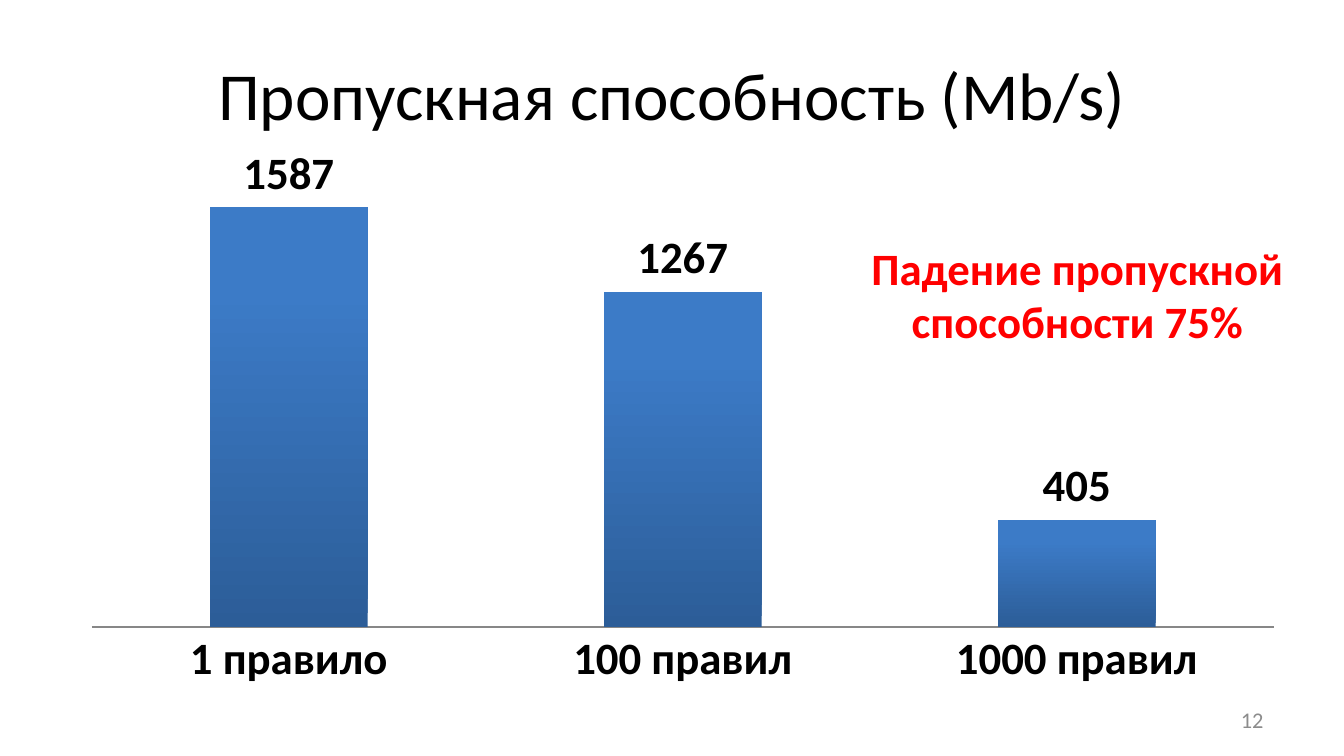
import pptx
import pptx.chart.data
import pptx.dml.color
import pptx.enum.chart
import pptx.enum.text
import pptx.oxml
import pptx.util
from pptx.util import Cm

RGB = pptx.dml.color.RGBColor.from_string
Pt = pptx.util.Pt
ALIGN = pptx.enum.text.PP_ALIGN
ANCHOR = pptx.enum.text.MSO_ANCHOR


class Theme:
    font = "Calibri"
    text = RGB("000000")
    accent = RGB("FF0000")
    muted = RGB("8C8C8C")
    axis = RGB("878787")
    bar_bottom = RGB("2C5D98")
    bar_top = RGB("3C7BC7")
    title_size = Pt(36)
    label_size = Pt(24)
    number_size = Pt(12)
    chart_size = Pt(10)


def style_font(font, size, color, bold=False):
    font.name = Theme.font
    font.size = size
    font.bold = bold
    font.color.rgb = color


prs = pptx.Presentation()
prs.slide_width, prs.slide_height = Cm(25.4), Cm(14.29)
s = prs.slides.add_slide(prs.slide_layouts[6])

# Title, slide number and callout
texts = [
    ("Пропускная способность (Mb/s)", (1.27, 0.58, 22.86, 2.39),
     ALIGN.CENTER, ANCHOR.MIDDLE, Theme.title_size, Theme.text, False),
    ("12", (18.21, 13.23, 5.92, 0.76),
     ALIGN.RIGHT, ANCHOR.MIDDLE, Theme.number_size, Theme.muted, False),
    ("Падение пропускной способности 75%", (15.32, 4.42, 10.08, 2.31),
     ALIGN.CENTER, ANCHOR.TOP, Theme.label_size, Theme.accent, True),
]
for text, box, align, anchor, size, color, bold in texts:
    sp = s.shapes.add_textbox(*map(Cm, box))
    tf = sp.text_frame
    tf.word_wrap = True
    tf.vertical_anchor = anchor
    p = tf.paragraphs[0]
    p.alignment = align
    r = p.add_run()
    r.text = text
    style_font(r.font, size, color, bold)

# Throughput chart
data = pptx.chart.data.CategoryChartData()
data.categories = ["1 правило", "100 правил", "1000 правил"]
data.add_series("Series 1", [1587, 1267, 405])
chart = s.shapes.add_chart(
    pptx.enum.chart.XL_CHART_TYPE.COLUMN_CLUSTERED,
    Cm(1.27), Cm(2.64), Cm(23.27), Cm(10.59), data).chart
chart.has_title = False
chart.has_legend = False
style_font(chart.font, Theme.chart_size, Theme.text)

# Axes
cat = chart.category_axis
cat.major_tick_mark = pptx.enum.chart.XL_TICK_MARK.NONE
cat.format.line.color.rgb = Theme.axis
cat.format.line.width = Pt(0.75)
style_font(cat.tick_labels.font, Theme.label_size, Theme.text, True)
val = chart.value_axis
val.minimum_scale, val.maximum_scale = 0, 1800
val.has_major_gridlines = False
val.visible = False

# Bars, shaded from bottom to top
plot = chart.plots[0]
plot.gap_width = 150
plot.overlap = -25
plot.vary_by_categories = False
fill = plot.series[0].format.fill
fill.gradient()
fill.gradient_angle = 90
for stop, color, position in zip(fill.gradient_stops,
                                 (Theme.bar_bottom, Theme.bar_top), (0, 0.8)):
    stop.color.rgb = color
    stop.position = position

# Value labels
plot.has_data_labels = True
labels = plot.data_labels
labels.show_value = True
labels.position = pptx.enum.chart.XL_LABEL_POSITION.OUTSIDE_END
style_font(labels.font, Theme.label_size, Theme.text, True)

# Inner plot area as fractions of the chart
plot_area = chart.element.chart.plotArea
for old in plot_area.findall(pptx.oxml.ns.qn("c:layout")):
    plot_area.remove(old)
plot_area.insert(0, pptx.oxml.parse_xml(
    f'<c:layout {pptx.oxml.ns.nsdecls("c")}><c:manualLayout>'
    '<c:layoutTarget val="inner"/><c:xMode val="edge"/><c:yMode val="edge"/>'
    '<c:x val="0.02"/><c:y val="0.02"/><c:w val="0.96"/><c:h val="0.85"/>'
    '</c:manualLayout></c:layout>'))

prs.save("out.pptx")
